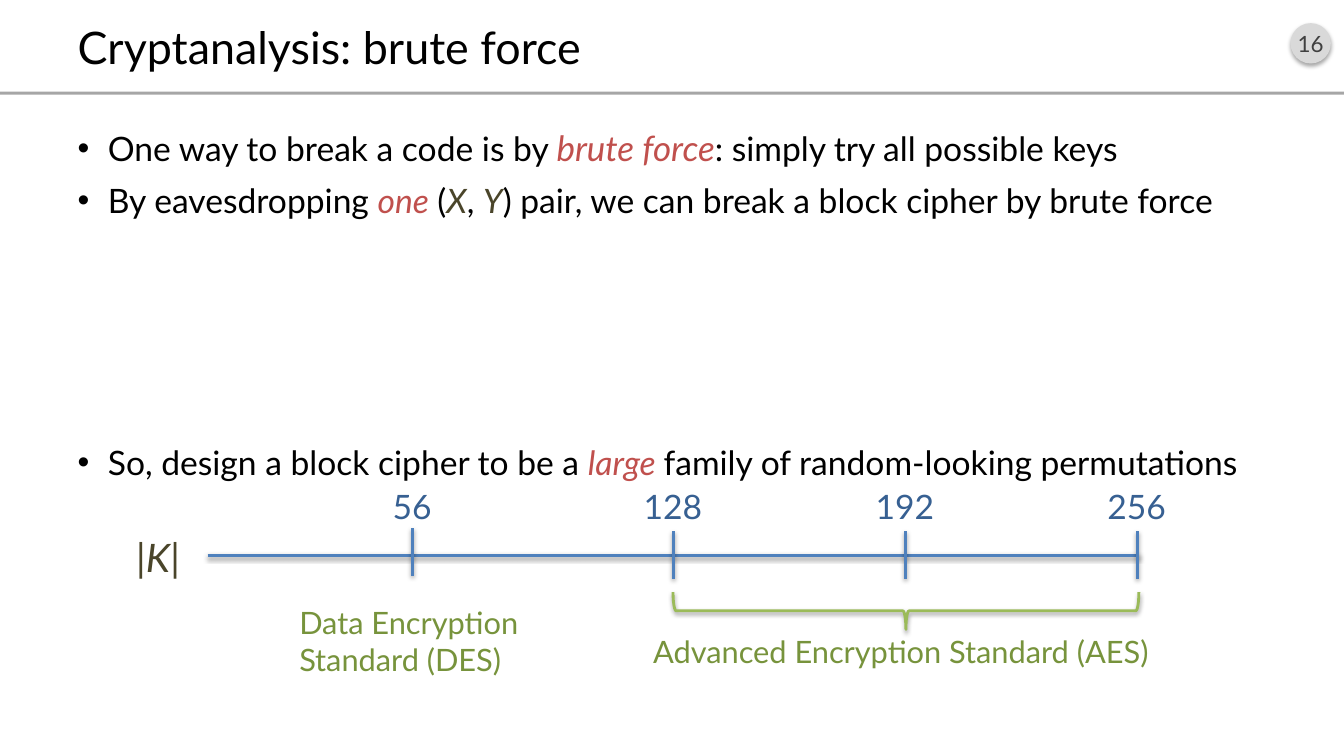
from dataclasses import dataclass
from typing import NamedTuple

from lxml import etree
from pptx import Presentation
from pptx import util as u
from pptx.dml import color
from pptx.enum import shapes, text
from pptx.oxml import ns

FONT = "Lato"
BLACK, RED, OLIVE = "000000", "C0504D", "4A452A"
BLUE, NAVY, GREEN, LIME = "4F81BD", "376092", "77933C", "9BBB59"


class Span(NamedTuple):
    words: str
    tint: str = BLACK
    size: float = 24


@dataclass
class Point:
    spans: list[Span]
    after: float = 0


@dataclass
class Label:
    words: str
    left: float
    top: float
    width: float
    height: float
    size: float
    tint: str
    wrap: bool = False
    slant: bool = False


@dataclass
class Tick:
    words: str
    x: float
    top: float = 5.27
    width: float = 0.79


POINTS = [
    Point([Span("One way to break a code is by "), Span("brute force", RED, 25),
           Span(": simply try all possible keys")]),
    Point([Span("By eavesdropping "), Span("one", RED), Span(" ("), Span("X", OLIVE),
           Span(", "), Span("Y", OLIVE),
           Span(") pair, we can break a block cipher by brute force")], 150),
    Point([Span("So, design a block cipher to be a "), Span("large ", RED),
           Span("family of random-looking permutations")]),
]
TICKS = [Tick("56", 4.09, 5.24, 0.59)] + [
    Tick(str(128 + 64 * i), 6.68 + 2.3 * i) for i in range(3)
]
LABELS = [
    Label("|K|", 1.25, 5.24, 0.67, 0.57, 28, OLIVE, slant=True),
    Label("Data Encryption Standard (DES)", 2.87, 5.94, 2.44, 0.84, 22, GREEN, wrap=True),
    Label("Advanced Encryption Standard (AES)", 6.38, 6.23, 5.2, 0.47, 22, GREEN, wrap=True),
] + [Label(t.words, t.x - t.width / 2, 4.77, t.width, 0.5, 24, NAVY) for t in TICKS]


def paint(target, tint: str) -> None:
    if hasattr(target, "solid"):
        target.solid()
        target = target.fore_color
    target.rgb = color.RGBColor.from_string(tint)


def style(run, tint: str, size: float, slant: bool = False) -> None:
    run.font.name = FONT
    run.font.size = u.Pt(size)
    run.font.italic = slant
    paint(run.font.color, tint)


def place(shape, left: float, top: float, width: float, height: float) -> None:
    shape.left, shape.top = u.Inches(left), u.Inches(top)
    shape.width, shape.height = u.Inches(width), u.Inches(height)


def shade(shape, alpha: int = 38, drop: float = 1.6) -> None:
    props = shape._element.spPr
    list_ = props.find(ns.qn("a:effectLst"))
    if list_ is None:
        list_ = etree.SubElement(props, ns.qn("a:effectLst"))
    outer = etree.SubElement(list_, ns.qn("a:outerShdw"), blurRad=str(u.Pt(3.1)),
                             dist=str(u.Pt(drop)), dir="5400000", rotWithShape="0")
    tone = etree.SubElement(outer, ns.qn("a:srgbClr"), val=BLACK)
    etree.SubElement(tone, ns.qn("a:alpha"), val=str(alpha * 1000))


def form(slide, kind, left: float, top: float, width: float, height: float):
    shape = slide.shapes.add_shape(kind, *map(u.Inches, (left, top, width, height)))
    shape.shadow.inherit = False
    return shape


def rule(slide, x1: float, y1: float, x2: float, y2: float) -> None:
    line = slide.shapes.add_connector(shapes.MSO_CONNECTOR.STRAIGHT,
                                      *map(u.Inches, (x1, y1, x2, y2)))
    paint(line.line.color, BLUE)
    line.line.width = u.Pt(2)
    shade(line)


def write(slide, label: Label) -> None:
    box = slide.shapes.add_textbox(
        *map(u.Inches, (label.left, label.top, label.width, label.height)))
    frame = box.text_frame
    frame.text = label.words
    frame.word_wrap = label.wrap
    frame.auto_size = text.MSO_AUTO_SIZE.SHAPE_TO_FIT_TEXT
    style(frame.paragraphs[0].runs[0], label.tint, label.size, label.slant)


def head(slide) -> None:
    badge = form(slide, shapes.MSO_SHAPE.OVAL, 12.8, 0.23, 0.4, 0.4)
    paint(badge.fill, "D9D9D9")
    badge.line.fill.background()
    shade(badge, 35, 1.8)
    frame = badge.text_frame
    frame.margin_left = frame.margin_right = 0
    frame.vertical_anchor = text.MSO_ANCHOR.MIDDLE
    frame.text = "16"
    frame.paragraphs[0].alignment = text.PP_ALIGN.CENTER
    style(frame.paragraphs[0].runs[0], "404040", 16)

    bar = form(slide, shapes.MSO_SHAPE.RECTANGLE, 0, 0.91, 13.33, 0.03)
    paint(bar.fill, "A6A6A6")
    bar.line.fill.background()

    title = slide.shapes.title
    place(title, 0.67, 0.16, 12, 0.6)
    frame = title.text_frame
    frame.text = "Cryptanalysis: brute force"
    frame.auto_size = text.MSO_AUTO_SIZE.NONE
    frame.vertical_anchor = text.MSO_ANCHOR.MIDDLE
    frame.paragraphs[0].alignment = text.PP_ALIGN.LEFT
    style(frame.paragraphs[0].runs[0], BLACK, 32)


def body(slide) -> None:
    holder = slide.placeholders[1]
    place(holder, 0.67, 1.21, 12, 5.75)
    frame = holder.text_frame
    frame.auto_size = text.MSO_AUTO_SIZE.NONE
    for i, point in enumerate(POINTS):
        para = frame.add_paragraph() if i else frame.paragraphs[0]
        para.space_before, para.space_after = u.Pt(8), u.Pt(point.after)
        props = para._p.get_or_add_pPr()
        props.set("marL", str(u.Inches(0.3)))
        props.set("indent", str(-u.Inches(0.3)))
        etree.SubElement(props, ns.qn("a:buChar"), char="•")
        for span in point.spans:
            run = para.add_run()
            run.text = span.words
            style(run, span.tint, span.size, span.tint != BLACK)


def scale(slide) -> None:
    rule(slide, 2.06, 5.51, 11.3, 5.51)
    for tick in TICKS:
        rule(slide, tick.x, tick.top + 0.47, tick.x, tick.top)
    for label in LABELS:
        write(slide, label)
    brace = form(slide, shapes.MSO_SHAPE.LEFT_BRACE, 8.8, 3.75, 0.37, 4.62)
    brace.rotation = 270
    brace.fill.background()
    paint(brace.line.color, LIME)
    brace.line.width = u.Pt(2)
    shade(brace)


def main() -> None:
    deck = Presentation()
    deck.slide_width, deck.slide_height = u.Inches(13.33), u.Inches(7.5)
    slide = deck.slides.add_slide(deck.slide_layouts[1])
    head(slide)
    body(slide)
    scale(slide)
    deck.save("out.pptx")


if __name__ == "__main__":
    main()
